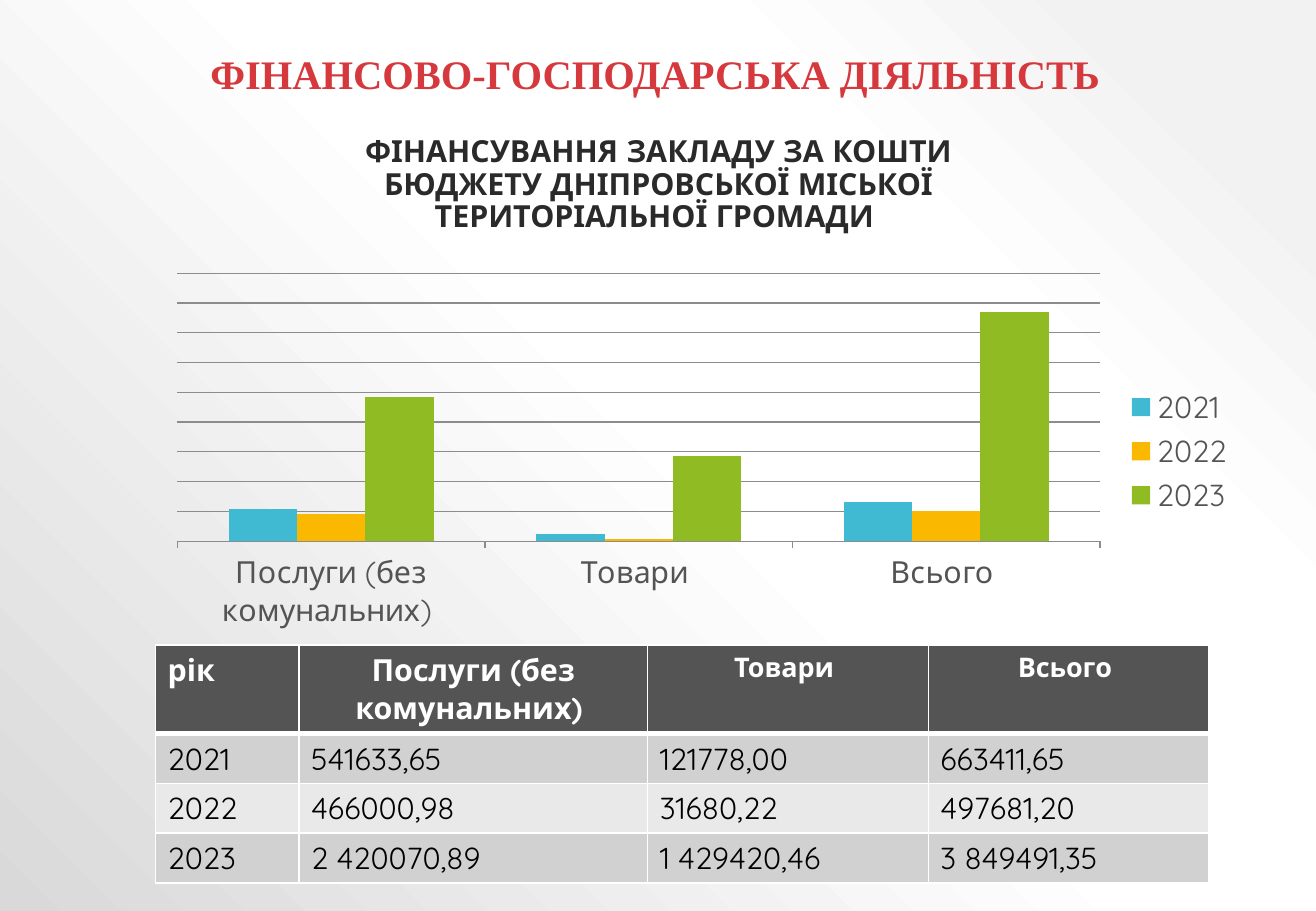
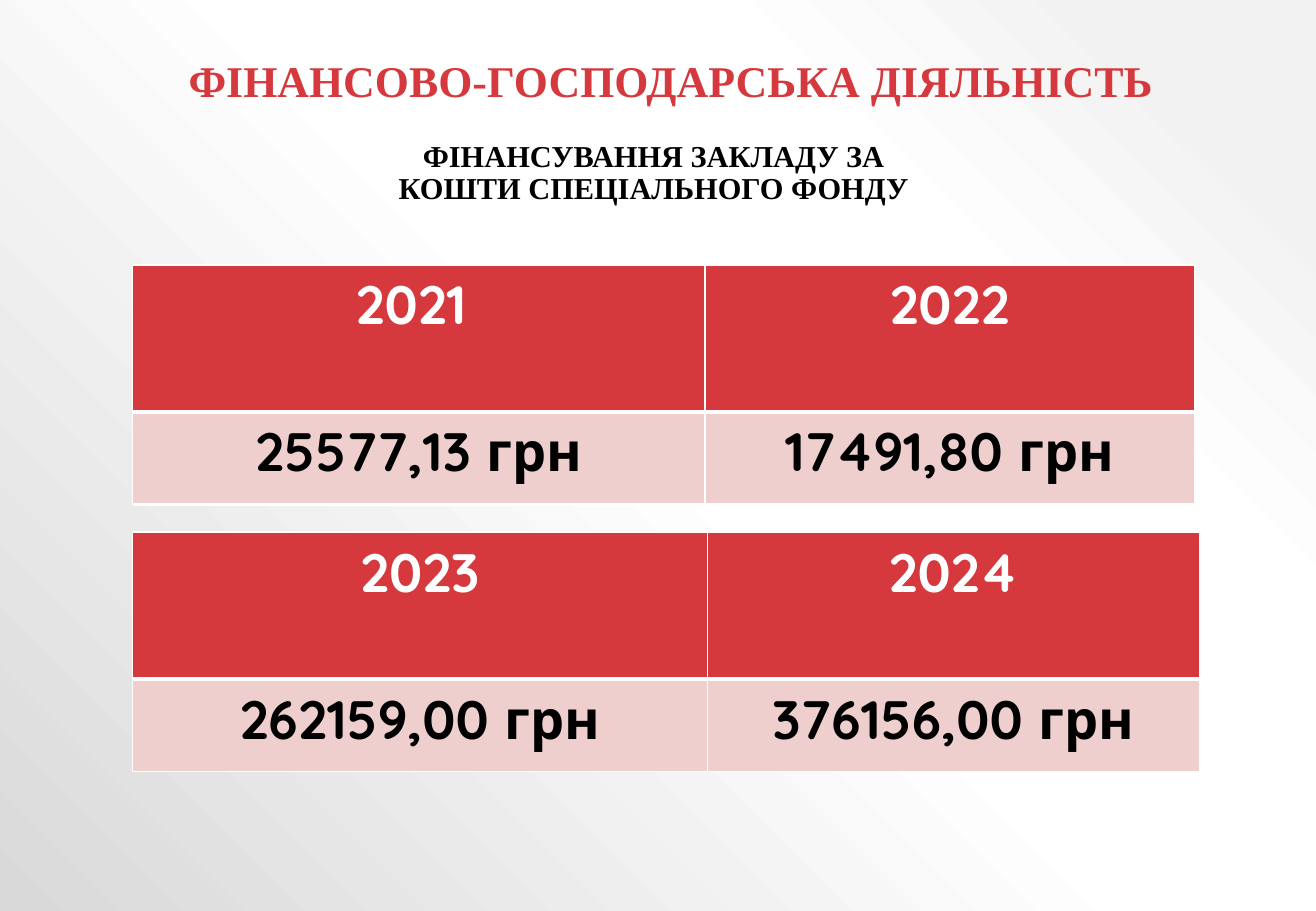
from dataclasses import dataclass

from lxml import etree
from pptx import Presentation
from pptx.chart.data import CategoryChartData
from pptx.dml.color import RGBColor
from pptx.enum.chart import XL_CHART_TYPE, XL_LEGEND_POSITION, XL_TICK_LABEL_POSITION, XL_TICK_MARK
from pptx.enum.text import MSO_ANCHOR, PP_ALIGN
from pptx.oxml import parse_xml
from pptx.oxml.ns import nsdecls, qn
from pptx.util import Inches, Pt


@dataclass(frozen=True)
class Theme:
    serif: str = "Times New Roman"
    sans: str = "Quicksand"
    red: str = "D5393D"
    pink: str = "EFCECE"
    dark: str = "545454"
    ink: str = "2A2A2A"
    black: str = "000000"
    white: str = "FFFFFF"
    bands: tuple = ("D1D1D1", "E9E9E9")
    series: tuple = ("40BAD2", "FAB900", "90BB23")
    grid: str = "8C8C8C"
    backdrop: tuple = ((10, "F2F2F2"), (28, "FFFFFF"), (48, "FFFFFF"), (100, "D9D9D9"))
    body_size: int = 18
    small_size: int = 16
    amount_size: int = 32


THEME = Theme()
SLIDE_SIZE = (10.83, 7.5)

# Content
TITLE = "ФІНАНСОВО-ГОСПОДАРСЬКА ДІЯЛЬНІСТЬ "
BUDGET_SUBTITLE = ("ФІНАНСУВАННЯ ЗАКЛАДУ ЗА КОШТИ БЮДЖЕТУ ДНІПРОВСЬКОЇ "
                   "МІСЬКОЇ ТЕРИТОРІАЛЬНОЇ ГРОМАДИ ")
FUND_SUBTITLE = "ФІНАНСУВАННЯ ЗАКЛАДУ ЗА КОШТИ СПЕЦІАЛЬНОГО ФОНДУ"
BUDGET_HEADER = ["рік", "Послуги (без комунальних) ", "Товари ", "Всього "]
BUDGET_ROWS = [
    ["2021", "541633,65", "121778,00", "663411,65"],
    ["2022", "466000,98", "31680,22", "497681,20"],
    ["2023", "2 420070,89", "1 429420,46", "3 849491,35"],
]
# Percent of the largest total
BUDGET_SHARES = {"2021": (14, 3, 17), "2022": (12, 1, 13), "2023": (63, 37, 100)}
FUND_EARLY = [["2021 ", "2022"], ["25577,13 грн", "17491,80 грн"]]
FUND_LATE = [["2023", "2024"], ["262159,00 грн", "376156,00 грн"]]
# Special fund: left, top, column widths, years with amounts;
# the first table lies under the last, its lower edge showing
FUND_TABLES = [
    (1.12, 2.19, (4.67, 4), FUND_EARLY),
    (1.09, 4.38, (4.73, 4.05), FUND_LATE),
    (1.09, 2.18, (4.71, 4.03), FUND_EARLY),
]


def rgb(color):
    return RGBColor.from_string(color)


def inches(*lengths):
    return [Inches(length) for length in lengths]


def write(frame, text, size=THEME.body_size, font=THEME.sans, color=THEME.black,
          bold=False, align=PP_ALIGN.LEFT, spacing=None):
    paragraph = frame.paragraphs[0]
    paragraph.alignment = align
    paragraph.line_spacing = spacing
    run = paragraph.add_run()
    run.text = text
    run.font.size, run.font.name, run.font.bold = Pt(size), font, bold
    run.font.color.rgb = rgb(color)


def add_heading(slide, text, box, anchor, **text_format):
    frame = slide.shapes.add_textbox(*inches(*box)).text_frame
    frame.word_wrap = True
    frame.vertical_anchor = anchor
    write(frame, text, bold=True, align=PP_ALIGN.CENTER, spacing=0.9, **text_format)


def add_headings(slide, title_box, title_size, subtitle, subtitle_box, **subtitle_format):
    add_heading(slide, TITLE, title_box, MSO_ANCHOR.BOTTOM,
                size=title_size, font=THEME.serif, color=THEME.red)
    add_heading(slide, subtitle, subtitle_box, MSO_ANCHOR.MIDDLE, **subtitle_format)


def set_borders(cell, **widths):
    properties = cell._tc.get_or_add_tcPr()
    for side in "LRTB":
        line = etree.SubElement(properties, qn(f"a:ln{side}"), w=str(Pt(widths.get(side, 1))))
        fill = etree.SubElement(line, qn("a:solidFill"))
        etree.SubElement(fill, qn("a:srgbClr"), val=THEME.white)


def add_grid(slide, left, top, widths, heights, rows, style):
    """style(row, column) gives the fill and the text format of a cell."""
    table = slide.shapes.add_table(
        len(rows), len(widths), *inches(left, top, sum(widths), sum(heights))).table
    for column, width in zip(table.columns, widths):
        column.width = Inches(width)
    for r, (height, texts) in enumerate(zip(heights, rows)):
        table.rows[r].height = Inches(height)
        for c, text in enumerate(texts):
            cell = table.cell(r, c)
            # A thick rule parts the header from the rows below
            set_borders(cell, **({"B": 3} if r == 0 else {"T": 3} if r == 1 else {}))
            fill, text_format = style(r, c)
            cell.fill.solid()
            cell.fill.fore_color.rgb = rgb(fill)
            write(cell.text_frame, text, **text_format)


def budget_style(row, column):
    if row:
        return THEME.bands[(row - 1) % 2], {}
    return THEME.dark, dict(
        color=THEME.white, bold=True,
        size=THEME.body_size if column < 2 else THEME.small_size,
        align=PP_ALIGN.CENTER if column else PP_ALIGN.LEFT)


def fund_style(row, column):
    fill, color = (THEME.pink, THEME.black) if row else (THEME.red, THEME.white)
    return fill, dict(color=color, bold=True, size=THEME.amount_size, align=PP_ALIGN.CENTER)


def add_budget_chart(slide, box):
    data = CategoryChartData()
    data.categories = BUDGET_HEADER[1:]
    for year, shares in BUDGET_SHARES.items():
        data.add_series(year, shares)
    chart = slide.shapes.add_chart(XL_CHART_TYPE.COLUMN_CLUSTERED, *inches(*box), data).chart
    chart.has_title = False
    chart.font.size, chart.font.name = Pt(THEME.body_size), THEME.sans
    chart.font.color.rgb = rgb(THEME.dark)
    chart.has_legend = True
    chart.legend.position = XL_LEGEND_POSITION.RIGHT
    chart.legend.include_in_layout = False

    plot = chart.plots[0]
    plot.gap_width, plot.overlap, plot.vary_by_categories = 150, 0, False
    for series, color in zip(plot.series, THEME.series):
        series.format.fill.solid()
        series.format.fill.fore_color.rgb = rgb(color)

    values, categories = chart.value_axis, chart.category_axis
    values.visible = False
    values.minimum_scale, values.maximum_scale, values.major_unit = 0, 117, 13
    values.has_major_gridlines = True
    categories.major_tick_mark = XL_TICK_MARK.OUTSIDE
    categories.tick_label_position = XL_TICK_LABEL_POSITION.LOW
    for line in (values.major_gridlines.format.line, categories.format.line):
        line.color.rgb = rgb(THEME.grid)


def set_backdrop(master):
    master.background.fill.gradient()
    gradient = master.element.xpath("./p:cSld/p:bg//a:gradFill")[0]
    stops = "".join(f'<a:gs pos="{share * 1000}"><a:srgbClr val="{color}"/></a:gs>'
                    for share, color in THEME.backdrop)
    gradient.getparent().replace(gradient, parse_xml(
        f'<a:gradFill {nsdecls("a")} rotWithShape="1"><a:gsLst>{stops}</a:gsLst>'
        '<a:path path="circle"><a:fillToRect l="100000" b="100000"/></a:path></a:gradFill>'))


def build_budget_slide(slide):
    add_headings(slide, (1.08, 0.3, 8.71, 0.56), 24,
                 BUDGET_SUBTITLE, (2.45, 0.94, 5.94, 1.17), color=THEME.ink)
    add_budget_chart(slide, (1.28, 2.19, 8.98, 3.05))
    add_grid(slide, 1.28, 5.31, (1.18, 2.87, 2.31, 2.31), (0.73, 0.41, 0.41, 0.41),
             [BUDGET_HEADER, *BUDGET_ROWS], budget_style)


def build_fund_slide(slide):
    add_headings(slide, (1.05, 0.44, 9.04, 0.49), 26,
                 FUND_SUBTITLE, (2.98, 0.93, 4.8, 1), font=THEME.serif)
    for left, top, widths, rows in FUND_TABLES:
        add_grid(slide, left, top, widths, (1.21, 0.76), rows, fund_style)


def main():
    prs = Presentation()
    prs.slide_width, prs.slide_height = inches(*SLIDE_SIZE)
    set_backdrop(prs.slide_master)
    for build in (build_budget_slide, build_fund_slide):
        build(prs.slides.add_slide(prs.slide_layouts[6]))
    prs.save("out.pptx")


if __name__ == "__main__":
    main()
